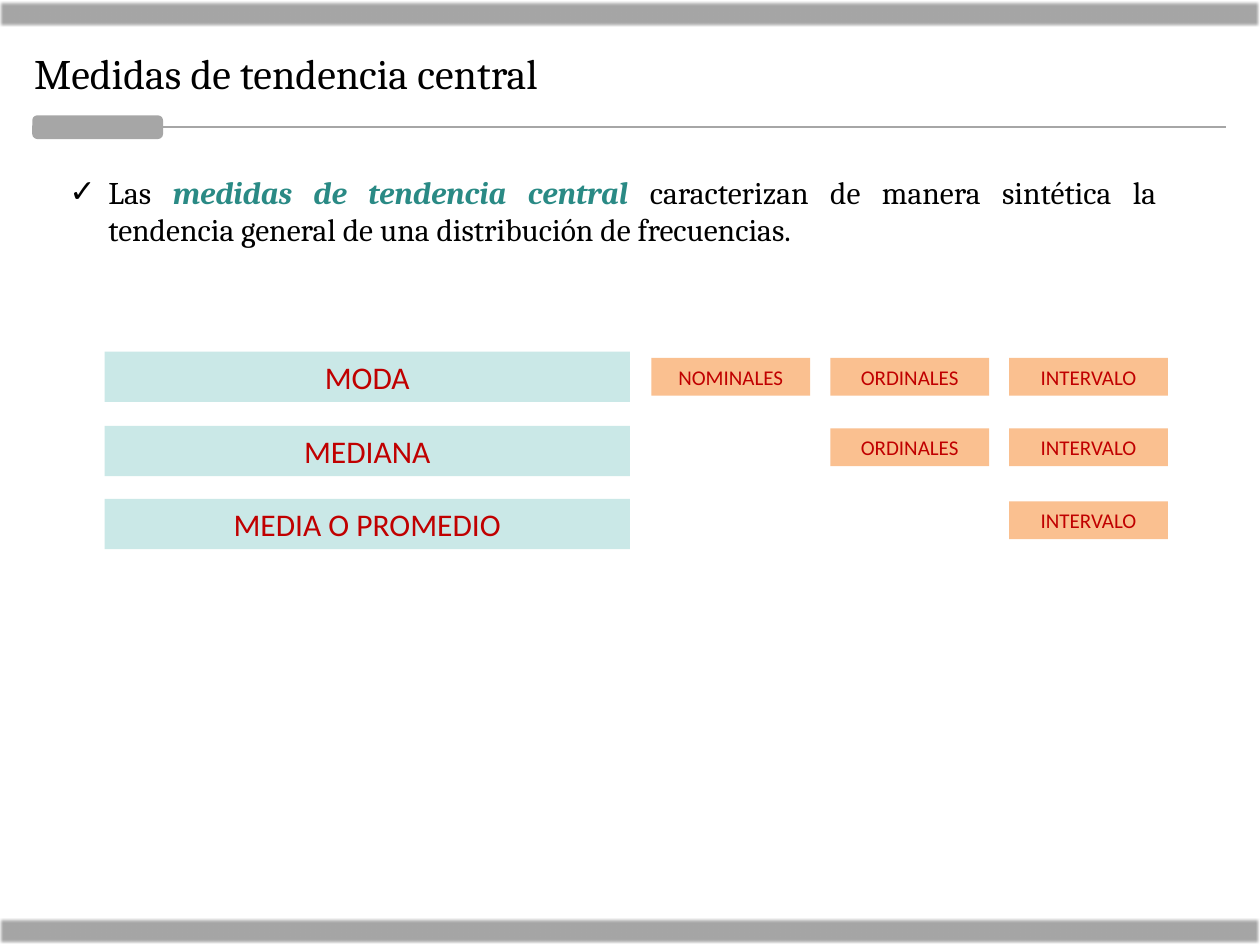
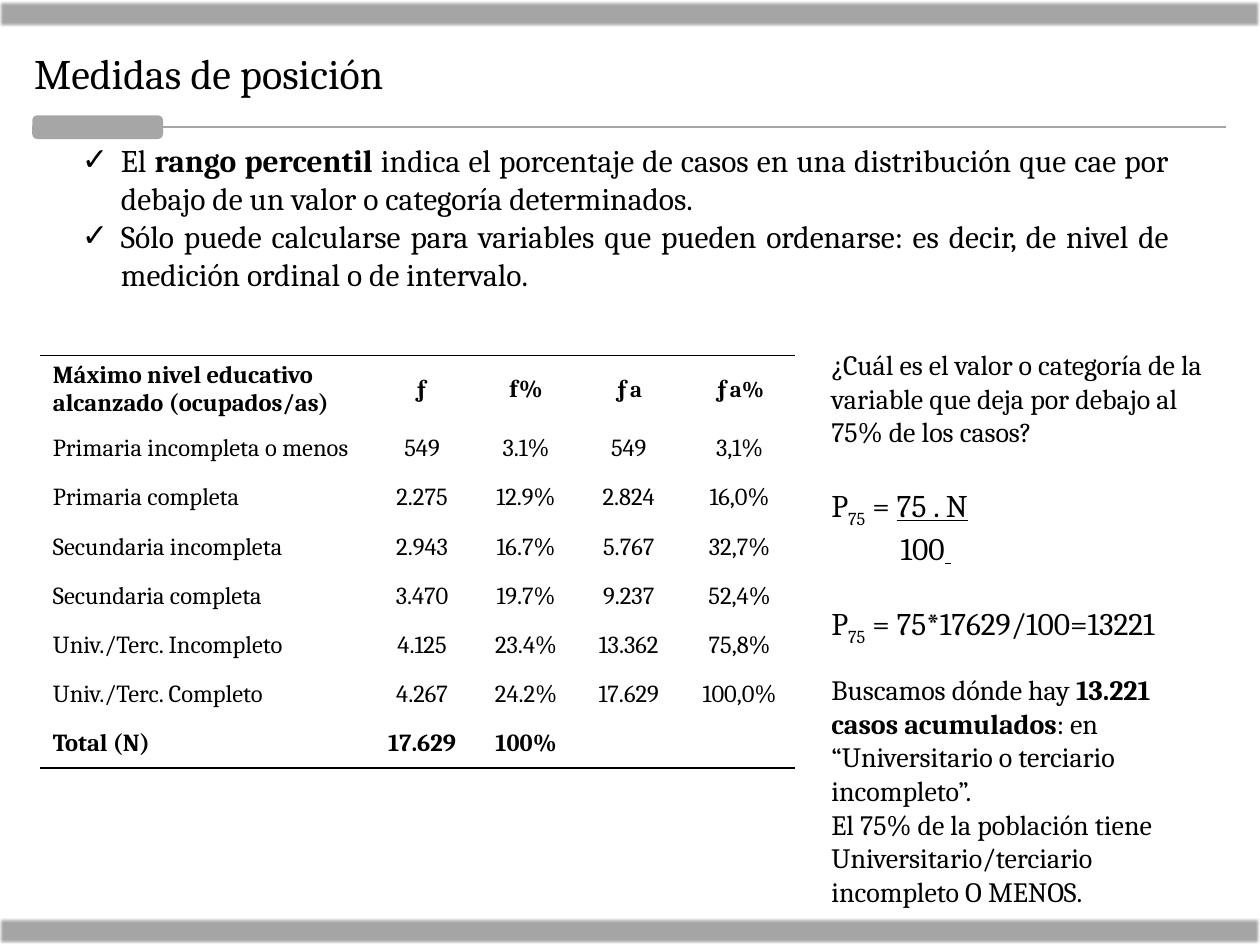
"""Build two statistics slides: central tendency and position measures."""
from dataclasses import dataclass
from typing import NamedTuple

from lxml.etree import SubElement
from pptx import Presentation
from pptx.dml.color import RGBColor
from pptx.enum.shapes import MSO_CONNECTOR, MSO_SHAPE
from pptx.enum.text import MSO_ANCHOR, MSO_AUTO_SIZE, PP_ALIGN
from pptx.oxml import parse_xml
from pptx.oxml.ns import nsdecls, qn
from pptx.util import Inches, Pt

COLORS = {
    "text": "000000",
    "gray": "A6A6A6",
    "teal": "2A8A85",
    "aqua": "CAE8E7",
    "orange": "FAC090",
    "red": "C00000",
}
SERIF, SANS = "Cambria", "Calibri"
NO_STYLE = "{2D5ABB26-0587-4C30-8999-92F81FD0307C}"


class Run(NamedTuple):
    text: str
    bold: bool = False
    italic: bool = False
    underline: bool = False
    subscript: bool = False
    color: str = "text"
    size: float | None = None


@dataclass
class Para:
    runs: list[Run]
    size: float = 18
    before: float = 0
    margin: float = 0


@dataclass
class Measure:
    name: str
    top: float
    tag_top: float
    first_tag: int


LEVELS = ["NOMINALES", "ORDINALES", "INTERVALO"]
MEASURES = [
    Measure("MODA", 2.79, 2.84, 0),
    Measure("MEDIANA", 3.38, 3.4, 1),
    Measure("MEDIA O PROMEDIO", 3.96, 3.98, 2),
]

TENDENCY = [
    Para([
        Run("Las "),
        Run("medidas de tendencia central ", bold=True, italic=True, color="teal"),
        Run("caracterizan de manera sintética la tendencia general de una "
            "distribución de frecuencias."),
    ]),
]
PERCENTILE = [
    Para([
        Run("El "),
        Run("rango percentil", bold=True),
        Run(" indica el porcentaje de casos en una distribución que cae por "
            "debajo de un valor o categoría determinados. "),
    ]),
    Para([Run("Sólo puede calcularse para variables que pueden ordenarse: es "
              "decir, de nivel de medición ordinal o de intervalo.")]),
]
P75 = [Run("P"), Run("75", subscript=True)]
FORMULA = [
    Para([Run("¿Cuál es el valor o categoría de la variable que deja por "
              "debajo al 75% de los casos?")], size=16),
    Para([*P75, Run(" = "), Run("75 . N", underline=True)], before=21.5),
    Para([Run("100"), Run(" ", underline=True)], margin=0.55),
    Para([*P75, Run(" = 75*17629/100=13221")], before=21.5),
]
ANSWER = [
    Para([
        Run("Buscamos dónde hay "),
        Run("13.221 casos acumulados", bold=True),
        Run(": en “Universitario o terciario incompleto”."),
    ], size=16),
    Para([Run("El 75% de la población tiene Universitario/terciario "
              "incompleto O MENOS.")], size=16),
]

COLUMN_WIDTHS = [2.58, 0.9, 0.75, 0.88, 0.88]
ROW_HEIGHT = 0.39
HEADER = [
    [Run("Máximo nivel educativo alcanzado (ocupados/as)", bold=True)],
    [Run("ƒ", bold=True)],
    [Run("f%", bold=True)],
    [Run("ƒ", bold=True), Run("a", bold=True, size=13)],
    [Run("ƒ", bold=True), Run("a%", bold=True, size=13)],
]
EDUCATION = [
    ["Primaria incompleta o menos", "549", "3.1%", "549", "3,1%"],
    ["Primaria completa", "2.275", "12.9%", "2.824", "16,0%"],
    ["Secundaria incompleta", "2.943", "16.7%", "5.767", "32,7%"],
    ["Secundaria completa", "3.470", "19.7%", "9.237", "52,4%"],
    ["Univ./Terc. Incompleto", "4.125", "23.4%", "13.362", "75,8%"],
    ["Univ./Terc. Completo", "4.267", "24.2%", "17.629", "100,0%"],
]
TOTAL = ["Total (N)", "17.629", "100%", "", ""]


def rgb(name: str) -> RGBColor:
    """Return a palette colour."""
    return RGBColor.from_string(COLORS[name])


def add_text(p, text: str, *, size: float = 18, font: str = SERIF,
             color: str = "text", bold: bool = False, italic: bool = False,
             underline: bool = False, subscript: bool = False) -> None:
    """Append one formatted run to a paragraph."""
    r = p.add_run()
    r.text = text
    r.font.size, r.font.name = Pt(size), font
    r.font.bold, r.font.italic, r.font.underline = bold, italic, underline
    r.font.color.rgb = rgb(color)
    if subscript:
        r.font._element.set("baseline", "-25000")


def add_runs(p, runs: list[Run], size: float) -> None:
    """Append runs that share a default size."""
    for run in runs:
        add_text(p, **{**run._asdict(), "size": run.size or size})


def write(tf, paras: list[Para], *, checks: bool = False) -> None:
    """Fill a text frame, with justified check bullets if asked."""
    tf.word_wrap = True
    tf.auto_size = MSO_AUTO_SIZE.NONE
    tf.vertical_anchor = MSO_ANCHOR.TOP
    for i, para in enumerate(paras):
        p = tf.add_paragraph() if i else tf.paragraphs[0]
        p.space_before = Pt(para.before)
        pPr = p._p.get_or_add_pPr()
        if para.margin:
            pPr.set("marL", str(Inches(para.margin)))
        if checks:
            p.alignment = PP_ALIGN.JUSTIFY
            pPr.set("marL", str(Inches(0.31)))
            pPr.set("indent", str(Inches(-0.31)))
            SubElement(pPr, qn("a:buFont")).set("typeface", "Arial")
            SubElement(pPr, qn("a:buChar")).set("char", "✓")
        add_runs(p, para.runs, para.size)


def place(sp, left: float, top: float, width: float, height: float) -> None:
    """Move and size a shape."""
    sp.left, sp.top = Inches(left), Inches(top)
    sp.width, sp.height = Inches(width), Inches(height)


def add_box(s, left: float, top: float, width: float, height: float,
            color: str, *, text: str = "", size: float = 18,
            kind: MSO_SHAPE = MSO_SHAPE.RECTANGLE):
    """Add a flat filled shape with optional centred text."""
    sp = s.shapes.add_shape(kind, Inches(left), Inches(top),
                            Inches(width), Inches(height))
    sp.shadow.inherit = False
    sp.fill.solid()
    sp.fill.fore_color.rgb = rgb(color)
    sp.line.fill.background()
    if text:
        p = sp.text_frame.paragraphs[0]
        p.alignment = PP_ALIGN.CENTER
        add_text(p, text, size=size, font=SANS, color="red")
    return sp


def add_frame(s) -> None:
    """Add the soft bands and the rule under the title."""
    for top in (0.01, 7.29):
        band = add_box(s, 0, top, 10, 0.2, "gray")
        effects = band._element.spPr.find(qn("a:effectLst"))
        SubElement(effects, qn("a:softEdge")).set("rad", str(Pt(1)))
    pill = add_box(s, 0.27, 0.93, 1.01, 0.16, "gray",
                   kind=MSO_SHAPE.ROUNDED_RECTANGLE)
    pill.line.color.rgb, pill.line.width = rgb("gray"), Pt(2)
    rule = s.shapes.add_connector(MSO_CONNECTOR.STRAIGHT, Inches(1.28),
                                  Inches(1.01), Inches(9.73), Inches(1.01))
    rule.begin_connect(pill, 3)
    rule.line.color.rgb, rule.line.width = rgb("gray"), Pt(1.25)
    SubElement(rule._element.spPr, qn("a:effectLst"))


def add_slide(prs, title: str, body: list[Para],
              body_box: tuple[float, float, float, float]):
    """Add a slide with its title, check list and frame."""
    s = prs.slides.add_slide(prs.slide_layouts[1])
    place(s.shapes.title, 0.17, 0.33, 9.56, 0.5)
    write(s.shapes.title.text_frame, [Para([Run(title)], size=24)])
    s.shapes.title.text_frame.paragraphs[0].alignment = PP_ALIGN.LEFT
    place(s.placeholders[1], *body_box)
    write(s.placeholders[1].text_frame, body, checks=True)
    add_frame(s)
    return s


def add_note(s, left: float, top: float, width: float, height: float,
             paras: list[Para]) -> None:
    """Add a text box."""
    sp = s.shapes.add_textbox(Inches(left), Inches(top),
                              Inches(width), Inches(height))
    write(sp.text_frame, paras)


def add_border(cell, side: str) -> None:
    """Draw one black border of a cell."""
    cell._tc.get_or_add_tcPr().insert(0, parse_xml(
        f'<a:{side} {nsdecls("a")} w="{Pt(1)}"><a:solidFill>'
        f'<a:srgbClr val="{COLORS["text"]}"/></a:solidFill></a:{side}>'))


def add_education_table(s) -> None:
    """Add the frequency table with lines above and below."""
    rows = [HEADER]
    rows += [[[Run(value)] for value in row] for row in EDUCATION]
    rows.append([[Run(value, bold=True)] for value in TOTAL])
    table = s.shapes.add_table(
        len(rows), len(COLUMN_WIDTHS), Inches(0.32), Inches(2.82),
        Inches(sum(COLUMN_WIDTHS)), Inches(ROW_HEIGHT * len(rows))).table
    table.first_row = table.horz_banding = False
    table._tbl.tblPr.find(qn("a:tableStyleId")).text = NO_STYLE
    for column, width in zip(table.columns, COLUMN_WIDTHS):
        column.width = Inches(width)
    for i, row in enumerate(rows):
        table.rows[i].height = Inches(ROW_HEIGHT)
        for j, runs in enumerate(row):
            cell = table.cell(i, j)
            cell.fill.background()
            cell.vertical_anchor = MSO_ANCHOR.MIDDLE
            if j:
                cell.margin_left = cell.margin_right = Inches(0.01)
            p = cell.text_frame.paragraphs[0]
            p.alignment = PP_ALIGN.CENTER if j else PP_ALIGN.LEFT
            add_runs(p, runs, 14)
            if i == 0:
                add_border(cell, "lnT")
            elif i == len(rows) - 1:
                add_border(cell, "lnB")


def build_tendency(prs) -> None:
    """Build the slide on central tendency."""
    s = add_slide(prs, "Medidas de tendencia central", TENDENCY,
                  (0.45, 1.32, 8.83, 0.71))
    for m in MEASURES:
        add_box(s, 0.83, m.top, 4.17, 0.4, "aqua", text=m.name)
        for i in range(m.first_tag, len(LEVELS)):
            add_box(s, 5.17 + 1.42 * i, m.tag_top, 1.26, 0.3, "orange",
                    text=LEVELS[i], size=12)


def build_position(prs) -> None:
    """Build the slide on position measures."""
    s = add_slide(prs, "Medidas de posición", PERCENTILE,
                  (0.55, 1.07, 8.83, 1.31))
    add_note(s, 6.5, 2.71, 3.39, 2.42, FORMULA)
    add_note(s, 6.5, 5.29, 3.19, 1.99, ANSWER)
    add_education_table(s)


def main() -> None:
    """Build and save the presentation."""
    prs = Presentation()
    prs.slide_width, prs.slide_height = Inches(10), Inches(7.5)
    build_tendency(prs)
    build_position(prs)
    prs.save("out.pptx")


if __name__ == "__main__":
    main()
